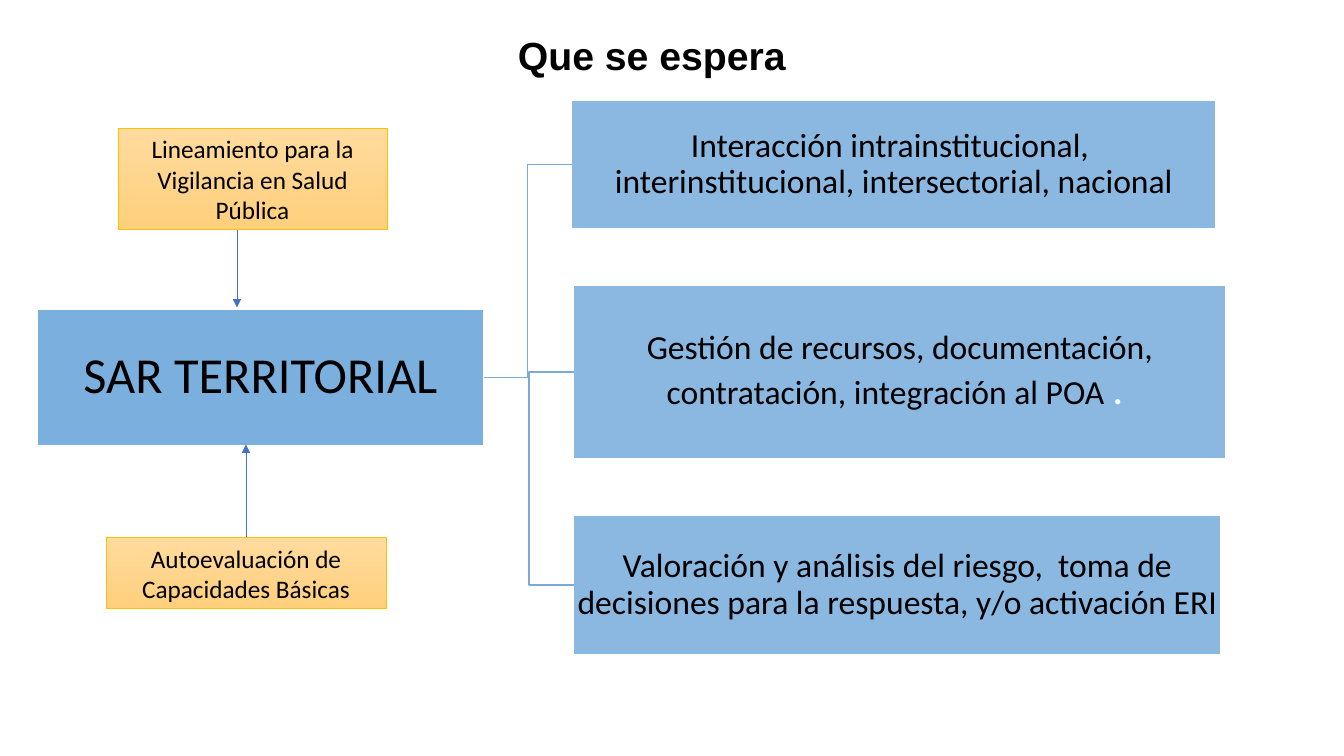
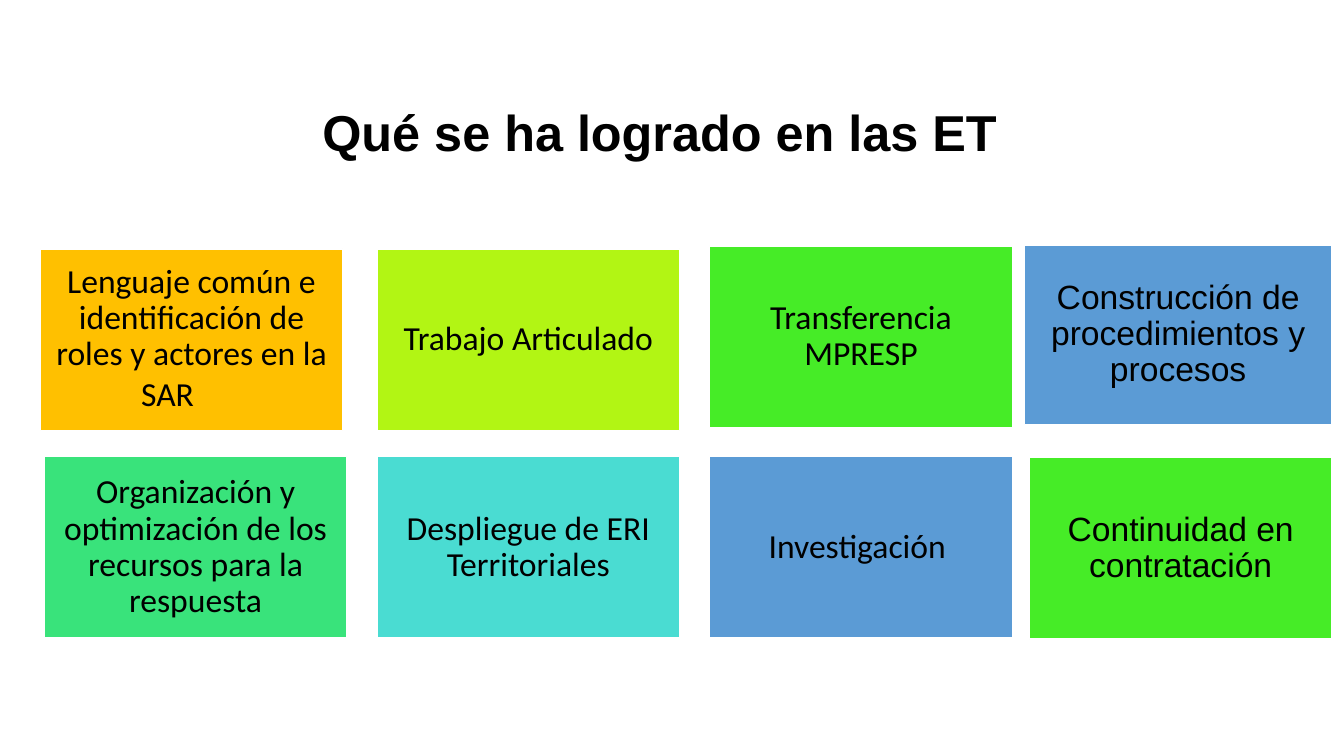
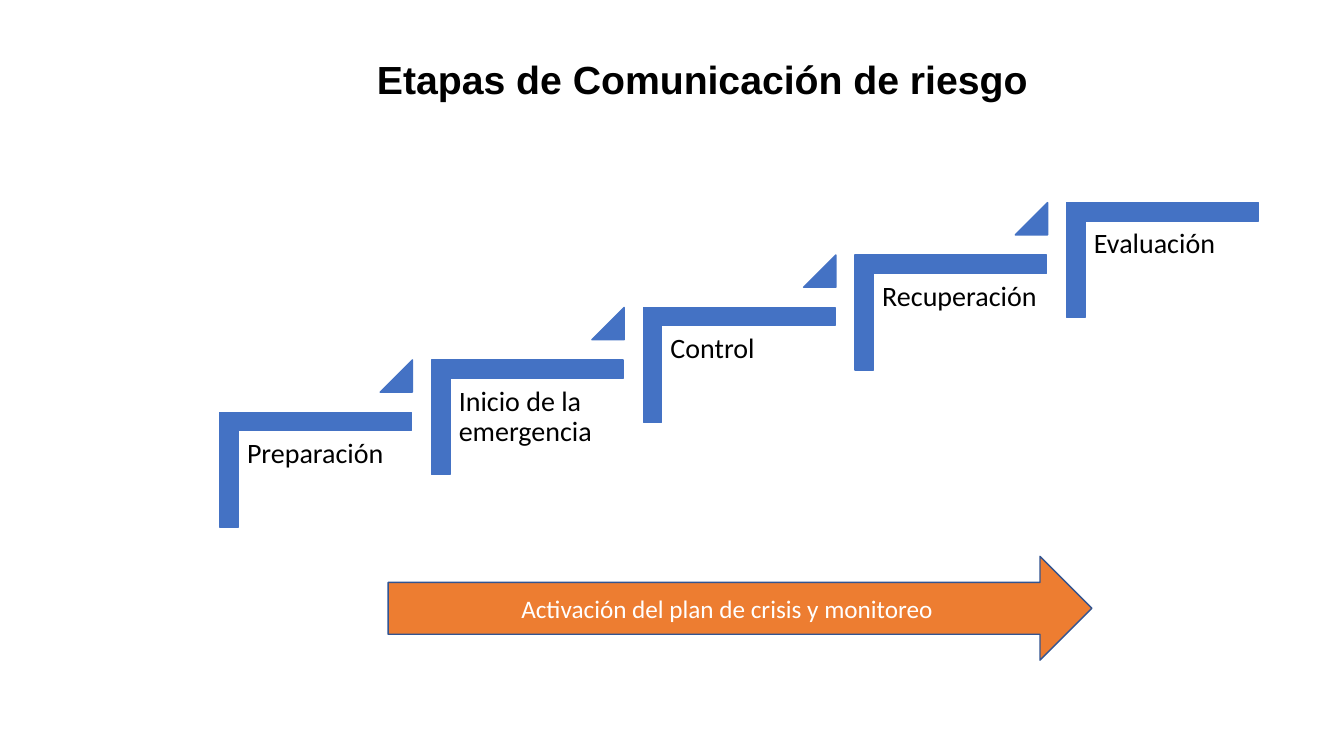
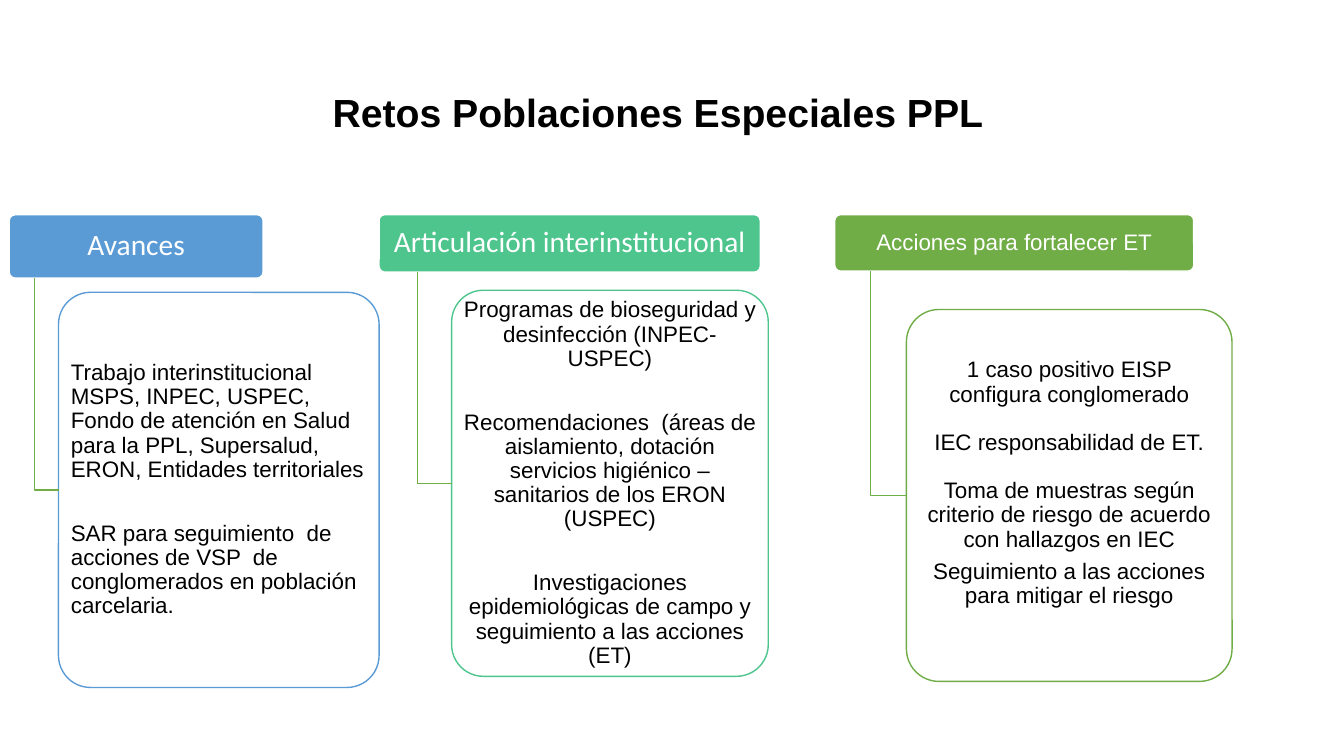
from pptx import Presentation
from pptx.dml.color import RGBColor
from pptx.enum import shapes, text
from pptx.oxml import ns, xmlchemy
from pptx.util import Inches, Pt

# Shared look
BLACK = RGBColor(0x00, 0x00, 0x00)
WHITE = RGBColor(0xFF, 0xFF, 0xFF)
BLUE = RGBColor(0x5B, 0x9B, 0xD5)
LINK_BLUE = RGBColor(0x7A, 0xA9, 0xDA)
DEEP_BLUE = RGBColor(0x44, 0x72, 0xC4)
NAVY = RGBColor(0x32, 0x54, 0x91)
GOLD = RGBColor(0xFF, 0xC0, 0x00)
SAND_TOP = RGBColor(0xFF, 0xDB, 0x9E)
SAND_BOTTOM = RGBColor(0xFF, 0xD0, 0x7C)
LIME = RGBColor(0xB2, 0xF5, 0x14)
BRIGHT_GREEN = RGBColor(0x46, 0xEC, 0x27)
MINT = RGBColor(0x39, 0xE3, 0x7B)
TURQUOISE = RGBColor(0x4A, 0xDC, 0xD2)
SEA_GREEN = RGBColor(0x4D, 0xC5, 0x8D)
GREEN = RGBColor(0x70, 0xAD, 0x47)
ORANGE = RGBColor(0xED, 0x7D, 0x31)

SHAPE = shapes.MSO_SHAPE
CENTER, LEFT = text.PP_ALIGN.CENTER, text.PP_ALIGN.LEFT
MIDDLE, TOP = text.MSO_ANCHOR.MIDDLE, text.MSO_ANCHOR.TOP
SIDES = ("margin_left", "margin_top", "margin_right", "margin_bottom")
TITLE_FONT = {"name": "Arial", "size": Pt(28), "bold": True}


def apply(target, values):
    for name, value in values.items():
        setattr(target, name, value)


def font_values(size, name="Calibri"):
    return {"name": name, "size": Pt(size)}


def place(left, top, width, height):
    return [Inches(value) for value in (left, top, width, height)]


def write(shape, paragraphs, font, color=BLACK, align=CENTER, anchor=MIDDLE,
          margins=(0.1, 0.05, 0.1, 0.05), spacing=0.9, gaps=()):
    """Fill a shape with paragraphs; gaps are the points after each one."""
    frame = shape.text_frame
    apply(frame, {"word_wrap": True, "vertical_anchor": anchor,
                  "auto_size": text.MSO_AUTO_SIZE.NONE})
    apply(frame, dict(zip(SIDES, map(Inches, margins))))
    for index, words in enumerate(paragraphs):
        para = frame.paragraphs[0] if index == 0 else frame.add_paragraph()
        apply(para, {"alignment": align, "line_spacing": spacing,
                     "space_before": Pt(0)})
        if index < len(gaps):
            para.space_after = Pt(gaps[index])
        add_span(para, words, font, color)


def add_span(para, words, font, color):
    span = para.add_run()
    span.text = words
    apply(span.font, font)
    span.font.color.rgb = color


def add_title(deck, words, area, size=28):
    page = deck.slides.add_slide(deck.slide_layouts[5])
    title = page.shapes.title
    apply(title, dict(zip(("left", "top", "width", "height"), place(*area))))
    write(title, [words], {**TITLE_FONT, "size": Pt(size)})
    return page


def add_box(page, area, fill, line=WHITE, kind=SHAPE.RECTANGLE, opacity=100,
            width=1, adjust=()):
    box = page.shapes.add_shape(kind, *place(*area))
    box.shadow.inherit = False
    for index, value in enumerate(adjust):
        box.adjustments[index] = value
    box.fill.solid()
    box.fill.fore_color.rgb = fill
    if opacity < 100:
        color = box.fill._xPr.find(".//" + ns.qn("a:srgbClr"))
        alpha = xmlchemy.OxmlElement("a:alpha")
        alpha.set("val", str(opacity * 1000))
        color.append(alpha)
    box.line.color.rgb = line
    box.line.width = Pt(width)
    return box


def add_note(page, area, words):
    box = add_box(page, area, SAND_TOP, GOLD, width=0.5)
    box.fill.gradient()
    box.fill.gradient_angle = 270
    for stop, color in zip(box.fill.gradient_stops, (SAND_TOP, SAND_BOTTOM)):
        stop.color.rgb = color
    write(box, [words], font_values(18), spacing=1)
    return box


def add_link(page, kind, start, end, color, width):
    link = page.shapes.add_connector(
        kind, *[Inches(value) for value in (*start, *end)])
    link.line.color.rgb = color
    link.line.width = Pt(width)
    link._element.spPr.append(xmlchemy.OxmlElement("a:effectLst"))
    return link


def add_arrow(page, start, end):
    arrow = add_link(page, shapes.MSO_CONNECTOR.STRAIGHT, start, end, DEEP_BLUE, 0.5)
    tail = xmlchemy.OxmlElement("a:tailEnd")
    tail.set("type", "triangle")
    arrow.line._get_or_add_ln().append(tail)
    return arrow


def add_bracket(page, header, body):
    """Join a header to the body that hangs below it."""
    x = header.left + header.width // 10
    y = body.top + body.height // 2
    builder = page.shapes.build_freeform(x, header.top + header.height)
    builder.add_line_segments([(x, y), (body.left, y)], close=False)
    bracket = builder.convert_to_shape()
    bracket.shadow.inherit = False
    bracket.fill.background()
    bracket.line.color.rgb = GREEN
    bracket.line.width = Pt(1)


def expectations_page(deck):
    page = add_title(deck, "Que se espera", (0.77, 0.21, 11.39, 0.72))
    hub = add_box(page, (0.37, 3.07, 4.43, 1.35), BLUE, opacity=80)
    write(hub, ["SAR TERRITORIAL"], font_values(36), margins=[0.03] * 4)

    # Expected results, each joined to the hub
    results = [
        ((5.67, 0.99, 6.39, 1.28), "Interacción intrainstitucional,  "
         "interinstitucional, intersectorial, nacional"),
        ((5.69, 2.83, 6.47, 1.72), "Gestión de recursos, documentación, "
         "contratación, integración al POA "),
        ((5.69, 5.11, 6.42, 1.39), "Valoración y análisis del riesgo,  toma de "
         "decisiones para la respuesta, y/o activación ERI"),
    ]
    boxes = []
    for area, words in results:
        box = add_box(page, area, BLUE, opacity=70)
        write(box, [words], font_values(24), margins=[0.02] * 4)
        link = add_link(page, shapes.MSO_CONNECTOR.ELBOW, (4.8, 3.75),
                        (area[0], area[1] + area[3] / 2), LINK_BLUE, 1)
        link.begin_connect(hub, 3)
        link.end_connect(box, 1)
        boxes.append(box)
    add_span(boxes[1].text_frame.paragraphs[0], ". ", font_values(31), WHITE)

    # Inputs to the hub
    add_note(page, (1.17, 1.27, 2.67, 1.01),
             "Lineamiento para la Vigilancia en Salud Pública")
    add_arrow(page, (2.35, 2.28), (2.35, 3.05))
    review = add_note(page, (1.05, 5.33, 2.78, 0.71),
                      "Autoevaluación de Capacidades Básicas")
    add_arrow(page, (2.44, 5.33), (2.44, 4.41)).begin_connect(review, 0)


def achievements_page(deck):
    page = add_title(deck, "Qué se ha logrado en las ET",
                     (0.65, 0.82, 11.79, 1.05), 36)
    size = (3, 1.8)
    tiles = [
        ((0.4, 2.47, *size), GOLD, "Calibri",
         "Lenguaje común e identificación de roles y actores en la SAR"),
        ((3.74, 2.47, *size), LIME, "Calibri", "Trabajo Articulado"),
        ((7.04, 2.44, *size), BRIGHT_GREEN, "Calibri", "Transferencia MPRESP"),
        ((10.16, 2.43, 3.05, 1.78), BLUE, "Arial",
         "Construcción de procedimientos y procesos"),
        ((0.44, 4.53, *size), MINT, "Calibri",
         "Organización y optimización de los recursos para la respuesta"),
        ((3.74, 4.53, *size), TURQUOISE, "Calibri",
         "Despliegue de ERI Territoriales"),
        ((7.04, 4.53, *size), BLUE, "Calibri", "Investigación "),
        ((10.21, 4.54, *size), BRIGHT_GREEN, "Arial",
         "Continuidad en contratación"),
    ]
    boxes = []
    for area, fill, font_name, words in tiles:
        box = add_box(page, area, fill)
        write(box, [words], font_values(24, font_name), margins=[0.1] * 4)
        boxes.append(box)
    add_span(boxes[0].text_frame.paragraphs[0], "\t", font_values(28), BLACK)


def stages_page(deck):
    page = add_title(deck, "Etapas de Comunicación de riesgo",
                     (1.39, 0.32, 11.15, 0.98))
    stages = ["Preparación", "Inicio de la emergencia", "Control",
              "Recuperación", "Evaluación"]
    # Rising staircase with a triangle between steps
    for index, stage in enumerate(stages):
        right, up = 2.1 * index, 0.52 * index
        step = add_box(page, (2.56 + right, 3.71 - up, 1.14, 1.9), DEEP_BLUE,
                       DEEP_BLUE, SHAPE.CORNER, adjust=(0.16, 0.16))
        step.rotation = 90
        label = page.shapes.add_textbox(*place(2.37 + right, 4.28 - up, 1.72, 1.5))
        write(label, [stage], font_values(20), align=LEFT, anchor=TOP,
              margins=[0.08] * 4)
        if index < len(stages) - 1:
            add_box(page, (3.77 + right, 3.57 - up, 0.32, 0.32), DEEP_BLUE,
                    DEEP_BLUE, SHAPE.ISOSCELES_TRIANGLE, adjust=(1,))

    plan = add_box(page, (3.85, 5.52, 6.98, 1.03), ORANGE, NAVY, SHAPE.RIGHT_ARROW)
    write(plan, ["Activación del plan de crisis y monitoreo"], font_values(18),
          WHITE, spacing=1)


def add_challenge(page, header_area, header_words, header_font, body_area,
                  color, paragraphs, gaps, align=CENTER, bottom=0.02):
    rounded = {"kind": SHAPE.ROUNDED_RECTANGLE, "adjust": (0.1,)}
    header = add_box(page, header_area, color, **rounded)
    write(header, [header_words], header_font, WHITE,
          margins=(0.04, 0.03, 0.04, 0.03))
    body = add_box(page, body_area, WHITE, color, opacity=90, **rounded)
    write(body, paragraphs, font_values(16, "Arial"), align=align,
          margins=(0.03, 0.02, 0.03, bottom), gaps=gaps)
    add_bracket(page, header, body)


def challenges_page(deck):
    page = add_title(deck, "Retos Poblaciones Especiales PPL",
                     (0.63, 0.61, 11.79, 1.05))
    wide, line, tight = 28.4, 17.3, 5.6
    add_challenge(
        page, (0.09, 2.13, 2.52, 0.63), "Avances", font_values(21),
        (0.58, 2.9, 3.18, 3.92), BLUE,
        ["Trabajo interinstitucional MSPS, INPEC, USPEC, Fondo de atención en "
         "Salud para la PPL, Supersalud, ERON, Entidades territoriales",
         "SAR para seguimiento  de acciones de VSP  de conglomerados en "
         "población carcelaria."],
        [wide], LEFT)
    add_challenge(
        page, (3.76, 2.13, 3.78, 0.57), "Articulación interinstitucional",
        font_values(21), (4.48, 2.88, 3.14, 3.83), SEA_GREEN,
        ["Programas de bioseguridad y desinfección (INPEC-USPEC)",
         "Recomendaciones  (áreas de aislamiento, dotación servicios higiénico "
         "– sanitarios de los ERON (USPEC)",
         "Investigaciones epidemiológicas de campo y seguimiento a las "
         "acciones (ET)"],
        [wide, wide])
    add_challenge(
        page, (8.28, 2.13, 3.56, 0.56), "Acciones para fortalecer ET",
        font_values(16, "Arial"), (8.99, 3.07, 3.23, 3.69), GREEN,
        ["1 caso positivo EISP configura conglomerado",
         "IEC responsabilidad de ET.",
         "Toma de muestras según criterio de riesgo de acuerdo con hallazgos "
         "en IEC",
         "Seguimiento a las acciones para mitigar el riesgo"],
        [line, line, tight], bottom=0.26)


def main():
    deck = Presentation()
    deck.slide_width, deck.slide_height = Inches(13.33), Inches(7.5)
    expectations_page(deck)
    achievements_page(deck)
    stages_page(deck)
    challenges_page(deck)
    deck.save("out.pptx")


if __name__ == "__main__":
    main()
